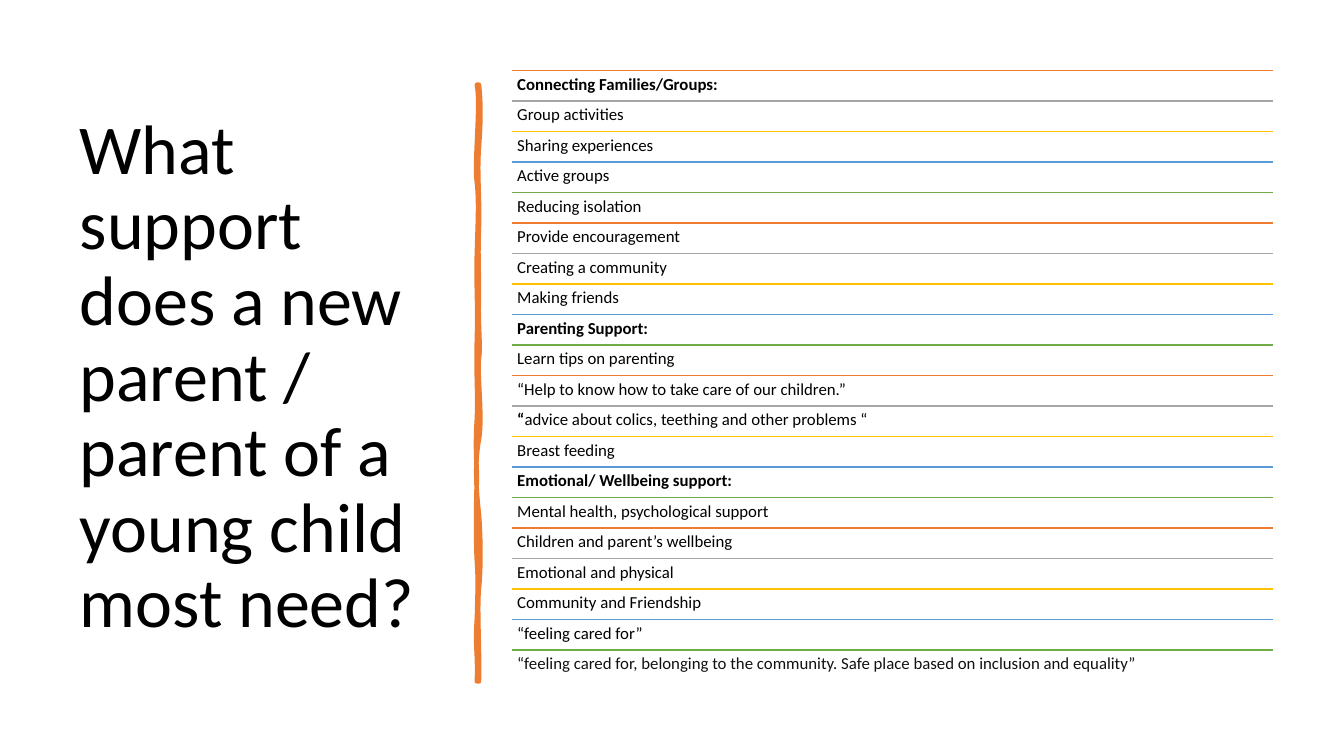
from pptx import Presentation
from pptx.dml.color import RGBColor
from pptx.enum.shapes import MSO_CONNECTOR
from pptx.enum.text import MSO_ANCHOR, MSO_AUTO_SIZE, PP_ALIGN
from pptx.oxml.ns import qn
from pptx.util import Inches, Pt
from lxml import etree

STRAIGHT = MSO_CONNECTOR.STRAIGHT
MIDDLE, TOP = MSO_ANCHOR.MIDDLE, MSO_ANCHOR.TOP
LEFT = PP_ALIGN.LEFT
NO_FIT = MSO_AUTO_SIZE.NONE

TITLE = "What support does a new parent / parent of a young child most need?"
COLORS = ["ED7D31", "A5A5A5", "FFC000", "5B9BD5", "70AD47"]
ROWS = [
    [("Connecting Families/Groups:", True)],
    [("Group activities", False)],
    [("Sharing experiences", False)],
    [("Active groups", False)],
    [("Reducing isolation", False)],
    [("Provide encouragement", False)],
    [("Creating a community", False)],
    [("Making friends", False)],
    [("Parenting Support:", True)],
    [("Learn tips on parenting", False)],
    [("“Help to know how to take care of our children.”", False)],
    [("“", True), ("advice about colics, teething and other problems “", False)],
    [("Breast feeding", False)],
    [("Emotional/ Wellbeing support:", True)],
    [("Mental health, psychological support", False)],
    [("Children and parent’s wellbeing", False)],
    [("Emotional and physical", False)],
    [("Community and Friendship", False)],
    [("“feeling cared for”", False)],
    [("“feeling cared for, belonging to the community. "
      "Safe place based on inclusion and equality”", False)],
]
BRUSH = [
    (4.75, 0.84), (4.77, 1.02), (4.77, 1.19), (4.75, 1.46),
    (4.73, 1.73), (4.76, 1.95), (4.75, 2.26), (4.74, 2.57),
    (4.75, 2.62), (4.75, 2.94), (4.74, 3.25), (4.77, 3.42),
    (4.75, 3.56), (4.73, 3.7), (4.79, 4.14), (4.75, 4.36),
    (4.71, 4.57), (4.72, 4.84), (4.75, 5.1), (4.77, 5.36),
    (4.77, 5.64), (4.75, 5.84), (4.73, 6.03), (4.76, 6.5),
    (4.75, 6.76), (4.74, 6.76), (4.73, 6.76), (4.73, 6.76),
    (4.74, 6.46), (4.71, 6.44), (4.73, 6.13), (4.74, 5.83),
    (4.74, 5.7), (4.73, 5.57), (4.72, 5.44), (4.72, 4.95),
    (4.73, 4.77), (4.73, 4.59), (4.71, 4.45), (4.73, 4.15),
    (4.74, 3.86), (4.72, 3.73), (4.73, 3.35), (4.74, 2.98),
    (4.72, 2.81), (4.73, 2.5), (4.74, 2.18), (4.75, 2),
    (4.73, 1.81), (4.7, 1.63), (4.77, 1.04), (4.73, 0.84),
]
X, Y, WIDTH = Inches(5.08), Inches(0.7), Inches(7.55)
PITCH = Inches(5.75) / (len(ROWS) - 1)
PAD = Inches(0.05)


def color(code):
    return RGBColor.from_string(code)


def assign(target, values):
    for name, value in values.items():
        setattr(target, name, value)


def write(frame, runs, size, code, form):
    assign(frame, {"word_wrap": True, "auto_size": NO_FIT, **form})
    para = frame.paragraphs[0]
    assign(para, {"alignment": LEFT, "line_spacing": 0.9})
    for text, bold in runs:
        run = para.add_run()
        run.text = text
        assign(run.font, {"name": "Calibri", "size": Pt(size), "bold": bold})
        run.font.color.rgb = color(code)


def add_title(slide):
    title = slide.shapes.title
    assign(title, {"left": Inches(0.69), "top": Inches(0.7),
                   "width": Inches(3.74), "height": Inches(6.11)})
    write(title.text_frame, [(TITLE, False)], 50, "000000",
          {"vertical_anchor": MIDDLE})


def bend(shape):
    sides = list(shape._element.iter(qn("a:lnTo")))
    for i in range(0, len(sides), 3):
        curve = etree.Element(qn("a:cubicBezTo"))
        sides[i].addprevious(curve)
        for side in sides[i:i + 3]:
            curve.append(side[0])
            side.getparent().remove(side)


def add_brush(slide):
    points = [(Inches(x), Inches(y)) for x, y in BRUSH]
    build = slide.shapes.build_freeform(*points[0])
    build.add_line_segments(points[1:], close=True)
    brush = build.convert_to_shape()
    bend(brush)
    brush.shadow.inherit = False
    brush.fill.solid()
    brush.fill.fore_color.rgb = color(COLORS[0])
    brush.line.color.rgb = color(COLORS[0])
    brush.line.width = Pt(3.25)
    line = brush.line._get_or_add_ln()
    line.set("cap", "rnd")
    etree.SubElement(line, qn("a:round"))


def add_rule(group, top, code):
    rule = group.shapes.add_connector(STRAIGHT, X, top, X + WIDTH, top)
    rule.line.color.rgb = color(code)
    rule.line.width = Pt(1)
    etree.SubElement(rule._element.spPr, qn("a:effectLst"))


def add_row(group, top, runs, code):
    box = group.shapes.add_textbox(X, top, WIDTH, round(PITCH))
    write(box.text_frame, runs, 12, code,
          {"vertical_anchor": TOP, "margin_left": PAD, "margin_right": PAD,
           "margin_top": PAD, "margin_bottom": PAD})


def add_list(slide):
    group = slide.shapes.add_group_shape()
    for i, runs in enumerate(ROWS):
        top = round(Y + i * PITCH)
        add_rule(group, top, COLORS[i % len(COLORS)])
        add_row(group, top, runs, "111111" if i == len(ROWS) - 1 else "000000")


def main():
    deck = Presentation()
    assign(deck, {"slide_width": Inches(13.33), "slide_height": Inches(7.5)})
    slide = deck.slides.add_slide(deck.slide_layouts[5])
    add_title(slide)
    add_brush(slide)
    add_list(slide)
    deck.save("out.pptx")


if __name__ == "__main__":
    main()
